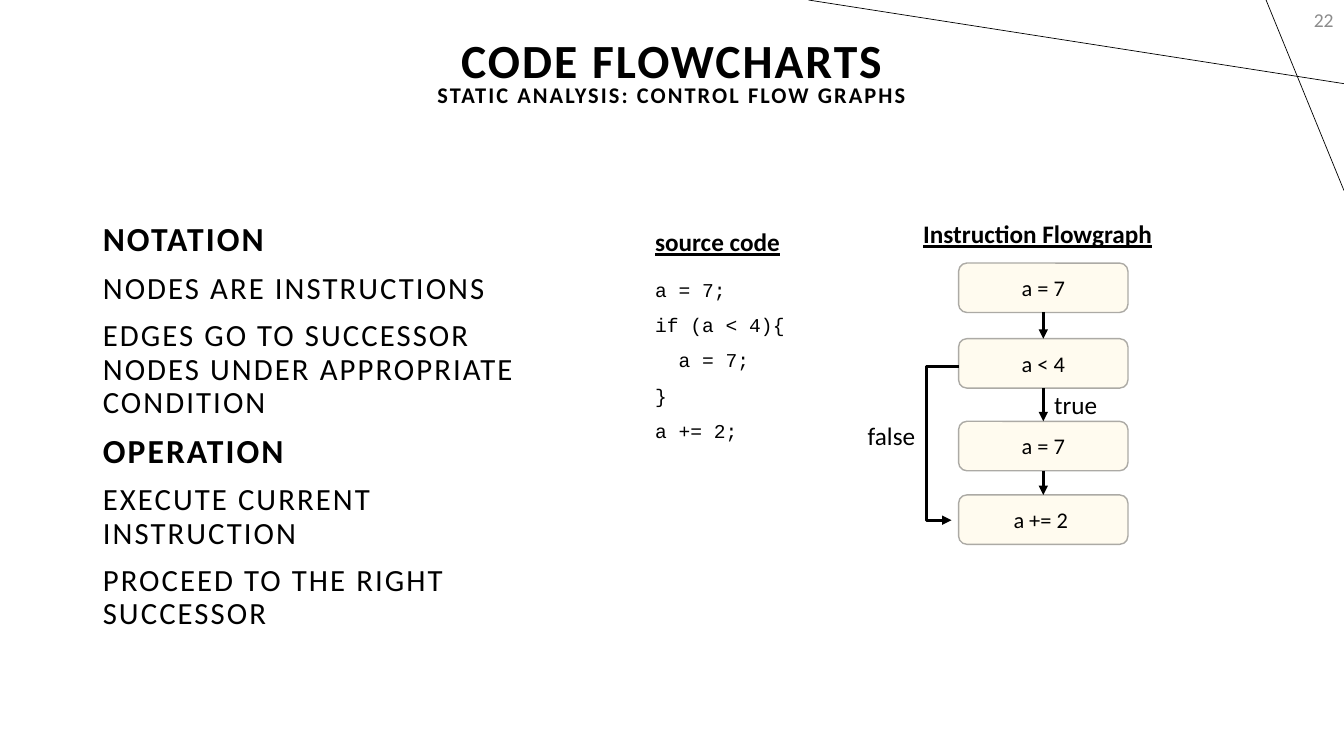
from itertools import pairwise
from lxml import etree
from pptx import Presentation, util as u
from pptx.dml.color import RGBColor
from pptx.enum import shapes, text
from pptx.oxml.ns import qn

HUES = {"ink": "000000", "page": "8C8C8C", "fill": "FFF2CC", "edge": "ACAAA5"}
WIDE, HIGH = 133.33, 75
CELL = 0.1

TITLE = "CODE FLOWCHARTS"
SUB = "STATIC ANALYSIS: CONTROL FLOW GRAPHS"
PAGE = "22"
NOTES = [
    ("NOTATION", ["NODES ARE INSTRUCTIONS",
                  "EDGES GO TO SUCCESSOR NODES UNDER APPROPRIATE CONDITION"]),
    ("OPERATION", ["EXECUTE CURRENT INSTRUCTION",
                   "PROCEED TO THE RIGHT SUCCESSOR"]),
]
CODE = ["a = 7;", "if (a < 4){\n  a = 7;", "}", "a += 2;"]
NODES = [("a = 7", 26.1), ("a < 4", 33.6), ("a = 7", 41.8), ("a += 2 ", 49.1)]
NODE = {"left": 95.1, "wide": 16.8, "high": 4.9}
HEADS = [("source code", (64, 22, 15.2, 4)),
         ("Instruction Flowgraph", (90.6, 21.2, 24.9, 4))]
TAGS = [("false", (85.1, 41.2, 6.8, 4)), ("true", (103.6, 38.1, 6.3, 4))]
RAYS = [(WIDE, 8.3, 80.2, 0), (125.6, 0, WIDE, 18.9)]
SKIP = {"start": (95.1, 36.4), "turn": 91.9, "stop": (94.4, 51.6)}

ALIGN, ANCHOR, FIT = text.PP_ALIGN, text.MSO_ANCHOR, text.MSO_AUTO_SIZE
KIND = shapes.MSO_CONNECTOR


def grid(*cells):
    return [u.Inches(c * CELL) for c in cells]


def tint(name):
    return RGBColor.from_string(HUES[name])


def place(shape, area):
    shape.left, shape.top, shape.width, shape.height = grid(*area)
    return shape


def write(shape, lines, size=18, font="Calibri", hue="ink", bold=False, under=False,
          track=0, align=ALIGN.LEFT, lead=1.0, before=0, anchor=ANCHOR.TOP,
          wrap=True, fit=FIT.NONE):
    frame = shape.text_frame
    frame.word_wrap, frame.auto_size, frame.vertical_anchor = wrap, fit, anchor
    for i, line in enumerate(lines):
        para = frame.paragraphs[0] if i == 0 else frame.add_paragraph()
        words, pts, heavy = line if isinstance(line, tuple) else (line, size, bold)
        para.text = words
        para.alignment, para.line_spacing = align, lead
        para.space_before = u.Pt(before)
        for run in para.runs:
            face = run.font
            face.name, face.size, face.bold = font, u.Pt(pts), heavy
            face.underline = under
            face.color.rgb = tint(hue)
            if track:
                run._r.get_or_add_rPr().set("spc", str(int(track * 100)))


def link(slide, ends, weight, kind=KIND.STRAIGHT, arrow=False):
    line = slide.shapes.add_connector(kind, *grid(*ends))
    line.line.color.rgb = tint("ink")
    line.line.width = u.Pt(weight)
    if arrow:
        etree.SubElement(line.line._get_or_add_ln(), qn("a:tailEnd"), type="triangle")
    etree.SubElement(line._element.spPr, qn("a:effectLst"))
    return line


def label(slide, area, lines, **style):
    write(slide.shapes.add_textbox(*grid(*area)), lines, **style)


def node(slide, words, top):
    area = NODE["left"], top, NODE["wide"], NODE["high"]
    box = slide.shapes.add_shape(shapes.MSO_SHAPE.ROUNDED_RECTANGLE, *grid(*area))
    box.shadow.inherit = False
    box.fill.solid()
    box.fill.fore_color.rgb = tint("fill")
    wash = box._element.spPr.find(qn("a:solidFill"))[0]
    etree.SubElement(wash, qn("a:alpha"), val="30000")
    box.line.color.rgb = tint("edge")
    box.line.width = u.Pt(1)
    write(box, [words], size=16, align=ALIGN.CENTER, anchor=ANCHOR.MIDDLE)
    return box


def main():
    deck = Presentation()
    deck.slide_width, deck.slide_height = grid(WIDE, HIGH)
    slide = deck.slides.add_slide(deck.slide_layouts[1])
    title, body = slide.placeholders

    for ray in RAYS:
        link(slide, ray, 0.5)

    head = dict(bold=True, track=1.5, align=ALIGN.CENTER, lead=0.9,
                anchor=ANCHOR.MIDDLE)
    write(place(title, (0.1, -1, 133.1, 14.5)), [TITLE], size=34, **head)
    label(slide, (0.1, 2.3, 133.1, 14.5), [SUB], size=16, **head)
    label(slide, (103.3, 0, 30, 4), [PAGE], size=14, hue="page",
          align=ALIGN.RIGHT, anchor=ANCHOR.MIDDLE)

    lines = []
    for topic, points in NOTES:
        lines += [(topic, 24, True)] + [(point, 22, False) for point in points]
    write(place(body, (9.2, 21.6, 48.7, 49.5)), lines, track=1.5, lead=0.9, before=10)
    for para in body.text_frame.paragraphs:
        props = para._p.get_or_add_pPr()
        props.set("marL", "0")
        props.set("indent", "0")
        etree.SubElement(props, qn("a:buNone"))

    boxes = [node(slide, *item) for item in NODES]
    for upper, lower in pairwise(boxes):
        step = link(slide, (0, 0, 0, 0), 2.25, arrow=True)
        step.begin_connect(upper, 2)
        step.end_connect(lower, 0)

    start, stop = SKIP["start"], SKIP["stop"]
    skip = link(slide, start + stop, 2.25, kind=KIND.ELBOW, arrow=True)
    bend = (start[0] - SKIP["turn"]) / (start[0] - stop[0])
    guides = skip._element.spPr.find(qn("a:prstGeom")).find(qn("a:avLst"))
    etree.SubElement(guides, qn("a:gd"), name="adj1", fmla=f"val {round(bend * 100000)}")

    loose = dict(wrap=False, fit=FIT.SHAPE_TO_FIT_TEXT)
    label(slide, (64, 25.9, 14.9, 18.4), CODE, size=14, font="Courier New",
          lead=1.5, **loose)
    for words, area in HEADS:
        label(slide, area, [words], bold=True, under=True, **loose)
    for words, area in TAGS:
        label(slide, area, [words], **loose)

    deck.save("out.pptx")


if __name__ == "__main__":
    main()
